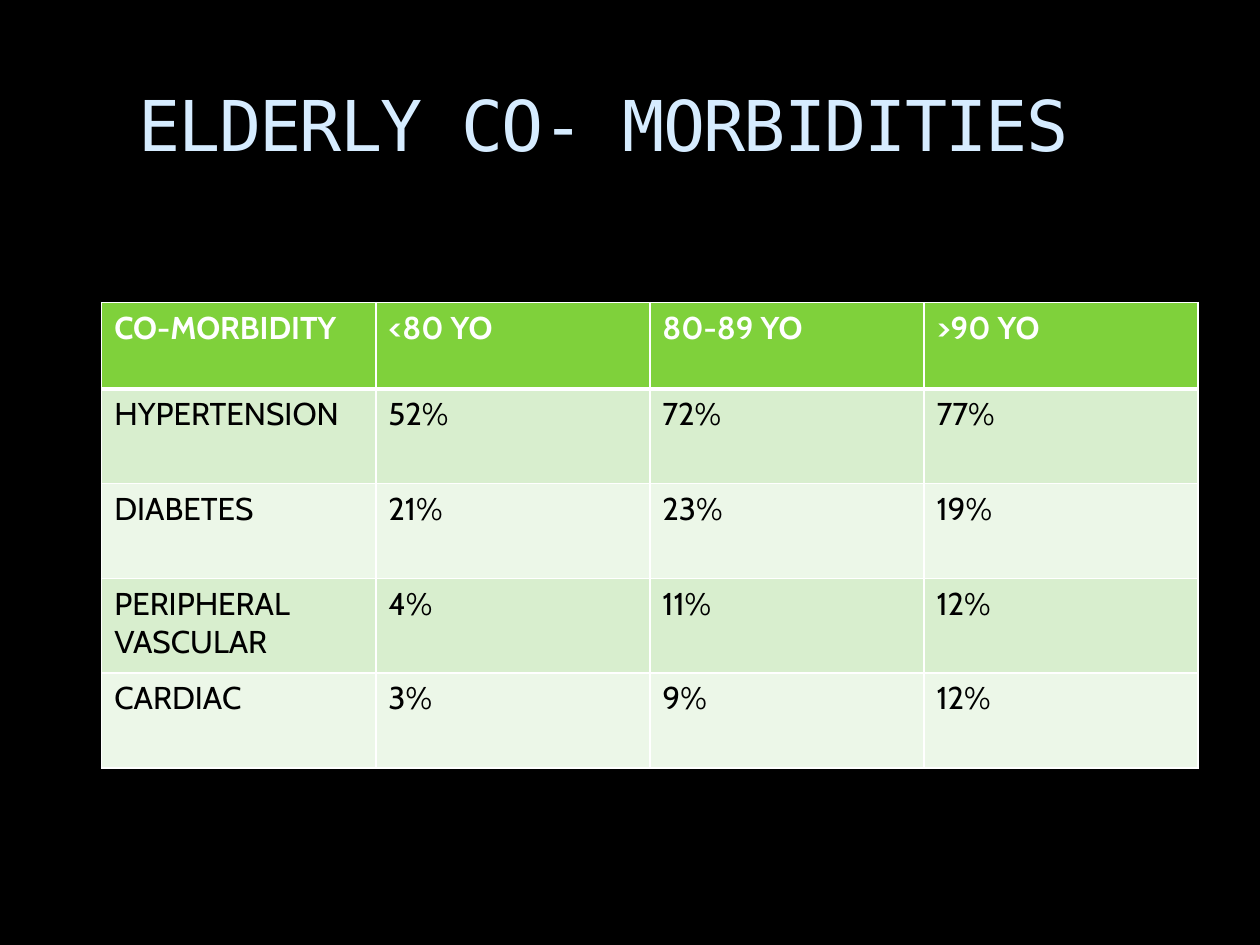
from lxml import etree
from pptx import Presentation
from pptx.dml.color import RGBColor
from pptx.enum.text import MSO_ANCHOR
from pptx.oxml.ns import qn
from pptx.util import Cm, Pt

TOP = MSO_ANCHOR.TOP
HUES = {
    "back": "000000", "title": "D6ECFF", "head": "7FD13B", "odd": "D8EECE",
    "even": "ECF7E8", "light": "FFFFFF", "dark": "000000",
}
ROWS = [
    ["CO-MORBIDITY", "<80 YO", "80-89 YO", ">90 YO"],
    ["HYPERTENSION", "52%", "72%", "77%"],
    ["DIABETES", "21%", "23%", "19%"],
    ["PERIPHERAL VASCULAR", "4%", "11%", "12%"],
    ["CARDIAC", "3%", "9%", "12%"],
]


def tint(name):
    return RGBColor.from_string(HUES[name])


class Deck:
    title = {"name": "DejaVu Sans Mono", "size": Pt(40), "bold": False}
    body = {"name": "Cabin", "size": Pt(18), "bold": False}
    head = {**body, "bold": True}

    def __init__(self, wide, high):
        self.prs = Presentation()
        self.prs.slide_width, self.prs.slide_height = Cm(wide), Cm(high)
        self.slide = self.prs.slides.add_slide(self.prs.slide_layouts[6])
        fill = self.slide.background.fill
        fill.solid()
        fill.fore_color.rgb = tint("back")

    def label(self, frame, words, style, hue):
        run = frame.paragraphs[0].add_run()
        run.text = words
        for key, value in style.items():
            setattr(run.font, key, value)
        run.font.color.rgb = tint(hue)
        return run

    def text(self, words, left, top, wide, high):
        box = self.slide.shapes.add_textbox(Cm(left), Cm(top), Cm(wide), Cm(high))
        frame = box.text_frame
        frame.word_wrap = True
        frame.vertical_anchor = TOP
        frame.margin_top = Cm(0.23)
        run = self.label(frame, words, self.title, "title")
        run.font._element.set("spc", "-100")

    def edge(self, cell, side, width):
        line = etree.SubElement(cell._tc.get_or_add_tcPr(), qn("a:" + side), w=str(Pt(width)))
        fill = etree.SubElement(line, qn("a:solidFill"))
        etree.SubElement(fill, qn("a:srgbClr"), val=HUES["light"])

    def table(self, rows, left, top, wide, first, rest):
        count = len(rows[0])
        high = first + rest * (len(rows) - 1)
        frame = self.slide.shapes.add_table(
            len(rows), count, Cm(left), Cm(top), Cm(wide), Cm(high))
        grid = frame.table
        for col in grid.columns:
            col.width = Cm(wide / count)
        for r, row in enumerate(rows):
            grid.rows[r].height = Cm(rest if r else first)
            style, hue = (self.body, "dark") if r else (self.head, "light")
            shade = ("odd" if r % 2 else "even") if r else "head"
            edges = {"lnL": 1, "lnR": 1, "lnT": 3 if r == 1 else 1, "lnB": 1 if r else 3}
            for c, words in enumerate(row):
                cell = grid.cell(r, c)
                self.label(cell.text_frame, words, style, hue)
                for side, width in edges.items():
                    self.edge(cell, side, width)
                cell.fill.solid()
                cell.fill.fore_color.rgb = tint(shade)


def main():
    deck = Deck(25.4, 19.05)
    deck.text("ELDERLY CO- MORBIDITIES", 2.54, 1.42, 21.59, 2.54)
    deck.table(ROWS, 2.05, 6.1, 22.1, 1.74, 1.91)
    deck.prs.save("out.pptx")


if __name__ == "__main__":
    main()
